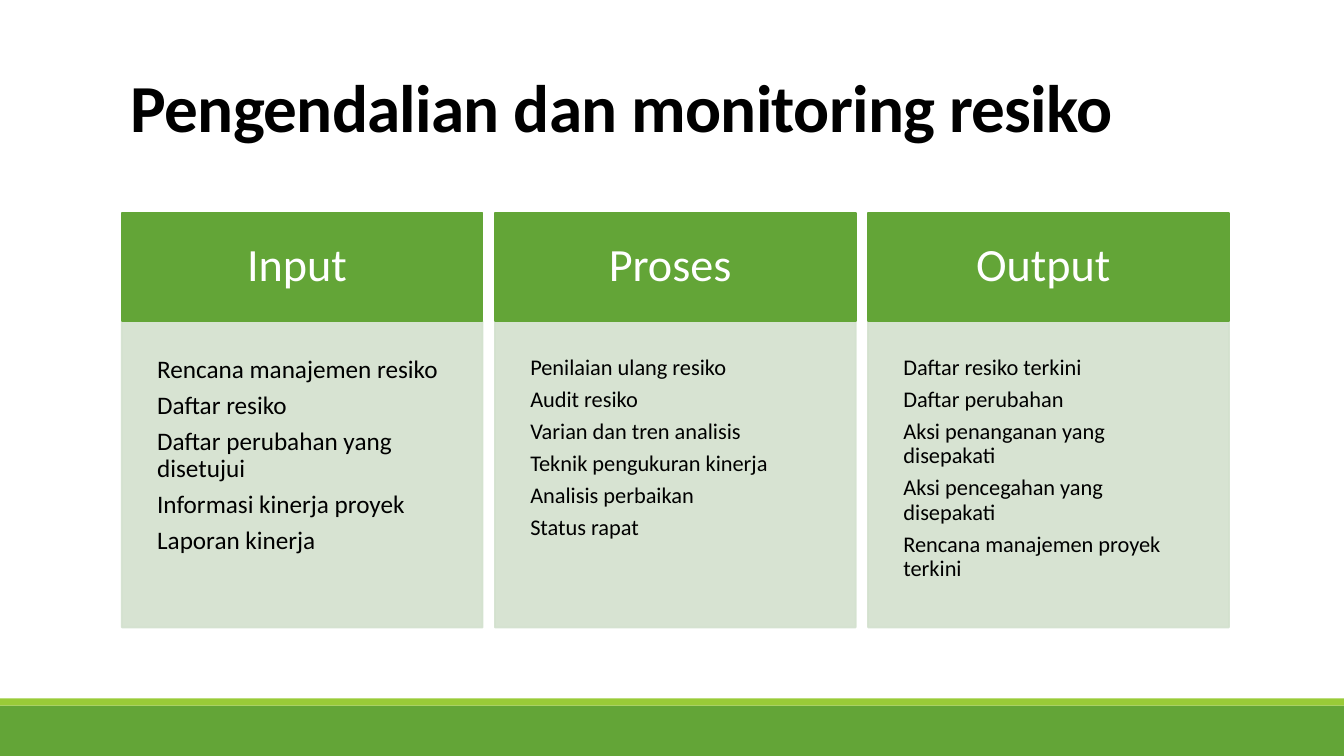
from dataclasses import dataclass

from lxml.etree import SubElement
from pptx import Presentation
from pptx.dml.color import RGBColor
from pptx.enum.shapes import MSO_SHAPE
from pptx.enum.text import MSO_ANCHOR, MSO_AUTO_SIZE, PP_ALIGN
from pptx.oxml.ns import qn
from pptx.util import Cm, Pt


@dataclass(frozen=True)
class Theme:
    font: str = "Calibri"
    green: str = "63A537"
    lime: str = "99CB38"
    pale: str = "D3E1CE"
    black: str = "000000"
    white: str = "FFFFFF"
    title: int = 48
    head: int = 33
    large: int = 18
    small: int = 16


THEME = Theme()
WIDE, HIGH = 33.87, 19.05

COLUMNS = [
    ("Input ", THEME.large, [
        "Rencana manajemen resiko", "Daftar resiko",
        "Daftar perubahan yang disetujui",
        "Informasi kinerja proyek", "Laporan kinerja"]),
    ("Proses ", THEME.small, [
        "Penilaian ulang resiko", "Audit resiko",
        "Varian dan tren analisis", "Teknik pengukuran kinerja",
        "Analisis perbaikan", "Status rapat"]),
    ("Output ", THEME.small, [
        "Daftar resiko terkini", "Daftar perubahan",
        "Aksi penanganan yang disepakati",
        "Aksi pencegahan yang disepakati",
        "Rencana manajemen proyek terkini"]),
]


def apply(target, values):
    for name, value in values.items():
        setattr(target, name, value)


def place(shape, box):
    apply(shape, dict(zip(("left", "top", "width", "height"), map(Cm, box))))


def paint(shape, color, edge=True):
    rgb = RGBColor.from_string(color)
    shape.fill.solid()
    shape.fill.fore_color.rgb = rgb
    if edge:
        shape.line.color.rgb = rgb
        shape.line.width = Pt(1.25)
    else:
        shape.line.fill.background()


def add_block(slide, box, color, edge=True):
    block = slide.shapes.add_shape(MSO_SHAPE.RECTANGLE, *map(Cm, box))
    block.shadow.inherit = False
    paint(block, color, edge)
    return block


def write(shape, lines, size, color, inset, anchor, align=PP_ALIGN.LEFT,
          bold=False, lead=0.9, after=0.35):
    frame = shape.text_frame
    frame.text = "\n".join(lines)
    apply(frame, {"word_wrap": True, "auto_size": MSO_AUTO_SIZE.NONE,
                  "vertical_anchor": anchor})
    apply(frame, {f"margin_{side}": Cm(inset)
                  for side in ("left", "top", "right", "bottom")})
    for para in frame.paragraphs:
        apply(para, {"alignment": align, "line_spacing": lead,
                     "space_before": Pt(0), "space_after": Pt(size * after)})
        font = para.runs[0].font
        apply(font, {"name": THEME.font, "size": Pt(size), "bold": bold})
        font.color.rgb = RGBColor.from_string(color)


def add_title(slide, box, text):
    title = slide.shapes.title
    place(title, box)
    write(title, [text], THEME.title, THEME.black, 0.25, MSO_ANCHOR.MIDDLE,
          bold=True, lead=0.85, after=0)
    # Tighter letter spacing
    title.text_frame.paragraphs[0].runs[0].font._element.set("spc", "-50")


def add_column(slide, body, box, head, size, items):
    left, top, width, height = box
    cap = 2.73

    # Heading
    block = add_block(slide, (left, top, width, cap), THEME.green)
    write(block, [head], THEME.head, THEME.white, 0.71, MSO_ANCHOR.MIDDLE,
          PP_ALIGN.CENTER)

    # List on a slightly clear panel
    place(body, (left, top + cap, width, height - cap))
    paint(body, THEME.pale)
    for tint in body.element.spPr.iter(qn("a:srgbClr")):
        SubElement(tint, qn("a:alpha"), val="90000")
    write(body, items, size, THEME.black, 0.89, MSO_ANCHOR.TOP)
    for para in body.text_frame.paragraphs:
        props = para._p.get_or_add_pPr()
        props.set("marL", "0")
        props.set("indent", "0")
        SubElement(props, qn("a:buNone"))


def add_columns(slide, box):
    left, top, width, height = box
    gap = 0.31
    each = (width - gap * (len(COLUMNS) - 1)) / len(COLUMNS)
    bodies = [p for p in slide.placeholders if p.placeholder_format.idx]
    for spot, (body, column) in enumerate(zip(bodies, COLUMNS)):
        area = (left + spot * (each + gap), top, each, height)
        add_column(slide, body, area, *column)
    # Drop the spare placeholder
    for spare in bodies[len(COLUMNS):]:
        spare.element.getparent().remove(spare.element)


def add_footer(slide, box):
    left, top, width, height = box
    strip = 0.18
    add_block(slide, (left, top + strip, width, height - strip),
              THEME.green, False)
    add_block(slide, (left, top, width, strip), THEME.lime, False)


def main():
    deck = Presentation()
    apply(deck, {"slide_width": Cm(WIDE), "slide_height": Cm(HIGH)})
    slide = deck.slides.add_slide(deck.slide_layouts.get_by_name("Comparison"))
    add_footer(slide, (0, 17.6, WIDE, 1.45))
    add_title(slide, (3.05, 0.79, 27.94, 4.04),
              "Pengendalian dan monitoring resiko")
    add_columns(slide, (3.07, 5.36, 27.9, 10.45))
    deck.save("out.pptx")


if __name__ == "__main__":
    main()
